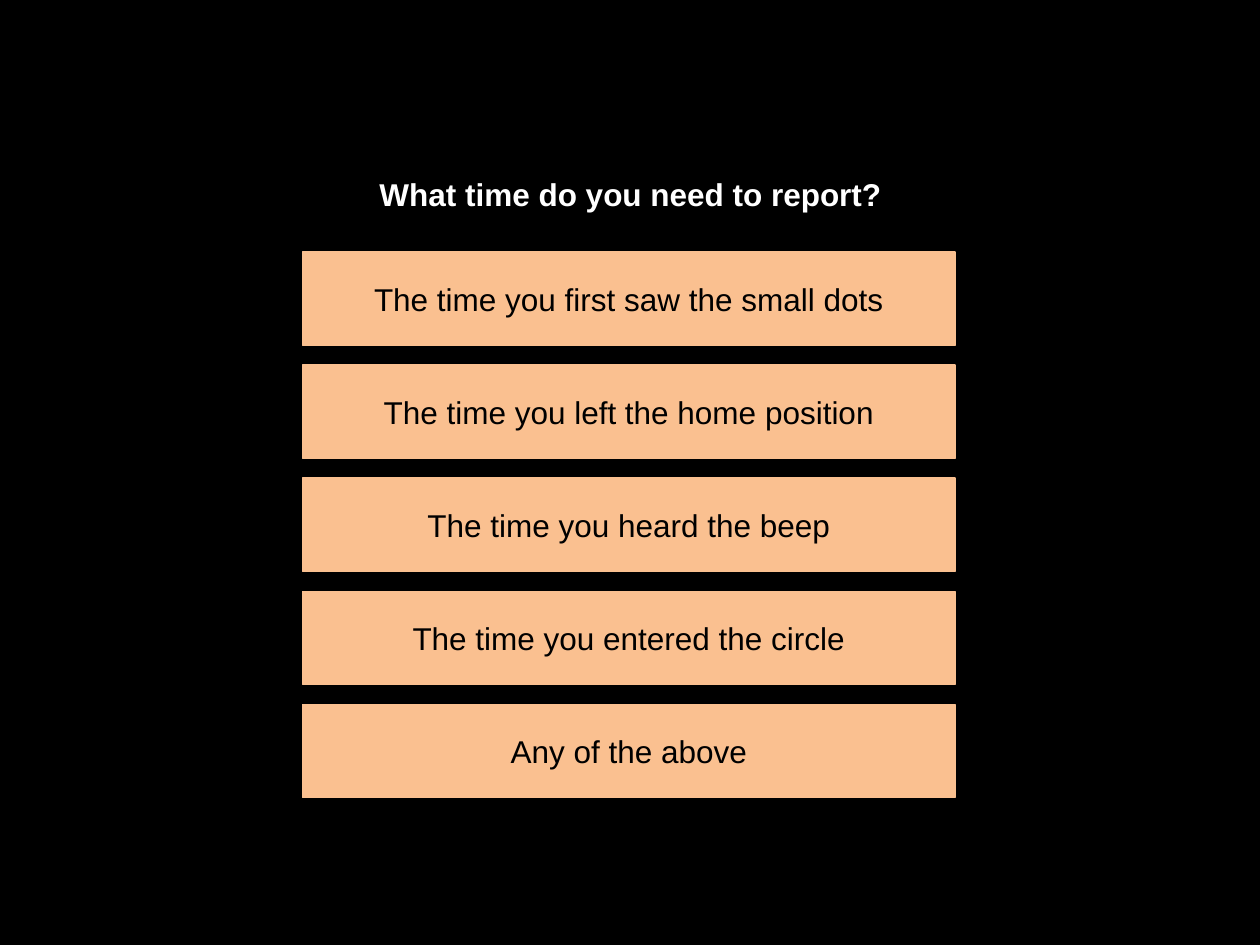
from pptx import Presentation
from pptx.dml.color import RGBColor
from pptx.enum.shapes import MSO_SHAPE
from pptx.enum.text import MSO_ANCHOR, MSO_AUTO_SIZE, PP_ALIGN
from pptx.util import Inches, Pt

RECT = MSO_SHAPE.RECTANGLE
CENTER = PP_ALIGN.CENTER
TOP, MIDDLE = MSO_ANCHOR.TOP, MSO_ANCHOR.MIDDLE
FIT_SHAPE, NO_FIT = MSO_AUTO_SIZE.SHAPE_TO_FIT_TEXT, MSO_AUTO_SIZE.NONE

QUESTION = "What time do you need to report?"
ANSWERS = [
    "The time you first saw the small dots",
    "The time you left the home position",
    "The time you heard the beep",
    "The time you entered the circle",
    "Any of the above",
]
BLACK, WHITE, PEACH = "000000", "FFFFFF", "FAC090"
WIDTH, HEIGHT = 10, 7.5
TITLE_BOX = (1.03, 1.34, 7.95, 0.4)
LEFT, FIRST_TOP, BAR_W, BAR_H = 2.4, 2, 5.18, 0.74
LAST_TOP = 5.59
PITCH = (LAST_TOP - FIRST_TOP) / (len(ANSWERS) - 1)
FONT = {"name": "Arial", "size": Pt(18)}


def rgb(value):
    return RGBColor.from_string(value)


def set_attrs(obj, values):
    for name, value in values.items():
        setattr(obj, name, value)


def write(sp, text, color, bold, frame):
    tf = sp.text_frame
    set_attrs(tf, {"word_wrap": True, **frame})
    p = tf.paragraphs[0]
    p.alignment = CENTER
    r = p.add_run()
    r.text = text
    set_attrs(r.font, {**FONT, "bold": bold})
    r.font.color.rgb = rgb(color)


def add_answer(s, row, text):
    box = (LEFT, FIRST_TOP + row * PITCH, BAR_W, BAR_H)
    sp = s.shapes.add_shape(RECT, *map(Inches, box))
    sp.shadow.inherit = False
    sp.fill.solid()
    sp.fill.fore_color.rgb = rgb(PEACH)
    sp.line.color.rgb = rgb(PEACH)
    sp.line.width = Pt(0.75)
    write(sp, text, BLACK, False, {"vertical_anchor": MIDDLE, "auto_size": NO_FIT})


def main():
    prs = Presentation()
    set_attrs(prs, {"slide_width": Inches(WIDTH), "slide_height": Inches(HEIGHT)})
    s = prs.slides.add_slide(prs.slide_layouts[5])
    s.background.fill.solid()
    s.background.fill.fore_color.rgb = rgb(BLACK)
    title = s.shapes.title
    set_attrs(title, dict(zip(("left", "top", "width", "height"), map(Inches, TITLE_BOX))))
    write(title, QUESTION, WHITE, True, {"vertical_anchor": TOP, "auto_size": FIT_SHAPE})
    for row, text in enumerate(ANSWERS):
        add_answer(s, row, text)
    prs.save("out.pptx")


if __name__ == "__main__":
    main()
